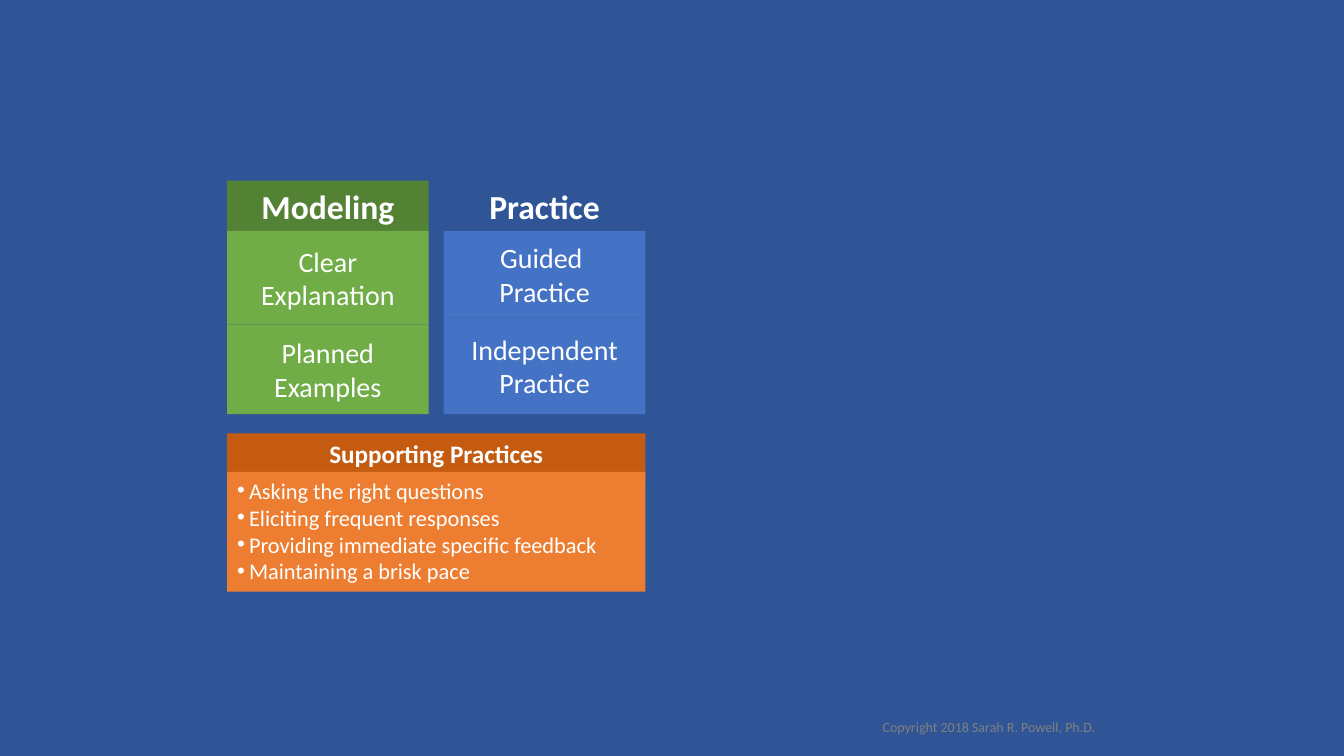
from lxml import etree
from pptx import Presentation
from pptx import util as u
from pptx.dml.color import RGBColor
from pptx.enum import shapes, text
from pptx.oxml.ns import qn

ALIGN = text.PP_ALIGN
ANCHOR = text.MSO_ANCHOR


def colour(hex_string):
    return RGBColor.from_string(hex_string)


class SlideBuilder:
    """Holds the style and the current slide, and draws each kind of element."""

    font = "Calibri"
    white = "FFFFFF"
    indent = u.Cm(0.3)

    def __init__(self, deck, background):
        self.slide = deck.slides.add_slide(deck.slide_layouts[1])
        self.slide.background.fill.solid()
        self.slide.background.fill.fore_color.rgb = colour(background)

    def place(self, box, area):
        box.left, box.top, box.width, box.height = map(u.Cm, area)

    def paint(self, box, fill):
        box.fill.solid()
        box.fill.fore_color.rgb = colour(fill)
        box.line.fill.background()

    def set_text(self, box, lines, size, ink=white, bold=False, align=ALIGN.CENTER,
                 anchor=ANCHOR.TOP, bullets=False):
        frame = box.text_frame
        frame.word_wrap = True
        frame.auto_size = text.MSO_AUTO_SIZE.NONE
        frame.vertical_anchor = anchor
        for index, line in enumerate(lines):
            para = frame.add_paragraph() if index else frame.paragraphs[0]
            if bullets:
                self.add_bullet(para)
            para.alignment = align
            para.space_before = u.Pt(0)
            span = para.add_run()
            span.text = line
            span.font.name = self.font
            span.font.size = u.Pt(size)
            span.font.bold = bold
            span.font.color.rgb = colour(ink)

    def add_bullet(self, para):
        props = para._p.get_or_add_pPr()
        props.set("marL", str(self.indent))
        props.set("indent", str(-self.indent))
        etree.SubElement(props, qn("a:buChar"), char="•")
        tabs = etree.SubElement(props, qn("a:tabLst"))
        etree.SubElement(tabs, qn("a:tab"), pos=str(self.indent), algn="l")

    def block(self, area, fill, lines, size, **style):
        box = self.slide.shapes.add_shape(shapes.MSO_SHAPE.RECTANGLE, *map(u.Cm, area))
        box.shadow.inherit = False
        self.paint(box, fill)
        self.set_text(box, lines, size, **style)

    def title(self, area, fill, line, size):
        box = self.slide.shapes.title
        self.place(box, area)
        self.paint(box, fill)
        self.set_text(box, [line], size, bold=True)

    def bullet_list(self, area, fill, lines, size):
        box = self.slide.placeholders[1]
        self.place(box, area)
        self.paint(box, fill)
        self.set_text(box, lines, size, align=ALIGN.LEFT, bullets=True)

    def footer(self, area, line, size, ink):
        box = self.slide.shapes.add_textbox(*map(u.Cm, area))
        box.text_frame.margin_top = box.text_frame.margin_bottom = 0
        self.set_text(box, [line], size, ink=ink, align=ALIGN.RIGHT, anchor=ANCHOR.MIDDLE)


def main():
    deck = Presentation()
    deck.slide_width, deck.slide_height = u.Cm(33.86), u.Cm(19.05)
    page = SlideBuilder(deck, "2F5597")

    left, width, gap = 5.72, 5.08, 0.38
    head_top, body_top, body_bottom = 4.55, 5.82, 10.44
    columns = [
        ("Modeling", "548235", "70AD47", 2.36,
         ["Clear Explanation"], ["Planned", "Examples"]),
        ("Practice", "2F5597", "4472C4", 2.18,
         ["Guided ", "Practice"], ["Independent Practice"]),
    ]
    for index, (heading, dark, light, upper_height, upper, lower) in enumerate(columns):
        x = left + index * (width + gap)
        split = body_top + upper_height
        page.block((x, head_top, width, body_top - head_top), dark, [heading], 24, bold=True)
        page.block((x, body_top, width, upper_height), light, upper, 20, anchor=ANCHOR.MIDDLE)
        page.block((x, split, width, body_bottom - split), light, lower, 20,
                   anchor=ANCHOR.MIDDLE)

    full_width = 2 * width + gap
    page.title((left, 10.92, full_width, 1.22), "C55A11", "Supporting Practices", 18)
    page.bullet_list((left, 11.89, full_width, 3.02), "ED7D31", [
        "Asking the right questions",
        "Eliciting frequent responses",
        "Providing immediate specific feedback",
        "Maintaining a brisk pace",
    ], 16)
    page.footer((18.59, 18.11, 9.25, 0.43), "Copyright 2018 Sarah R. Powell, Ph.D.", 10, "808080")
    deck.save("out.pptx")


if __name__ == "__main__":
    main()
